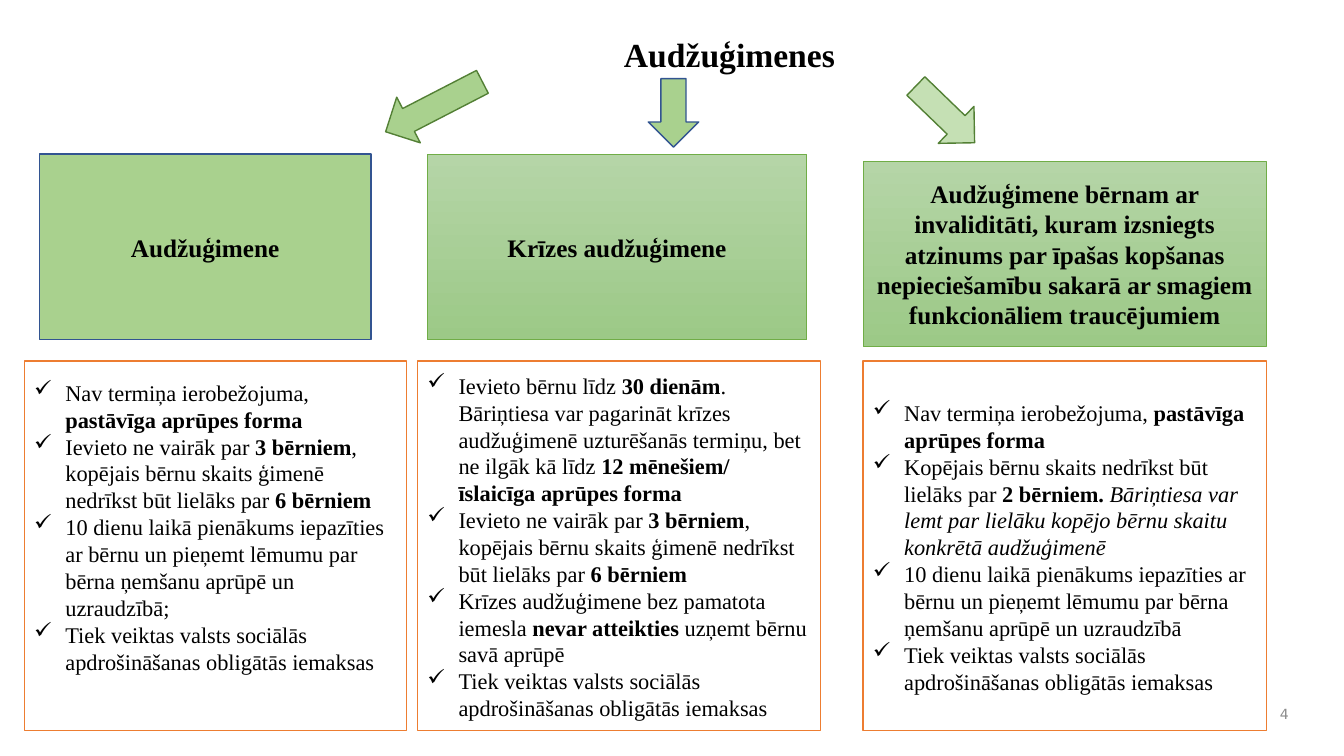
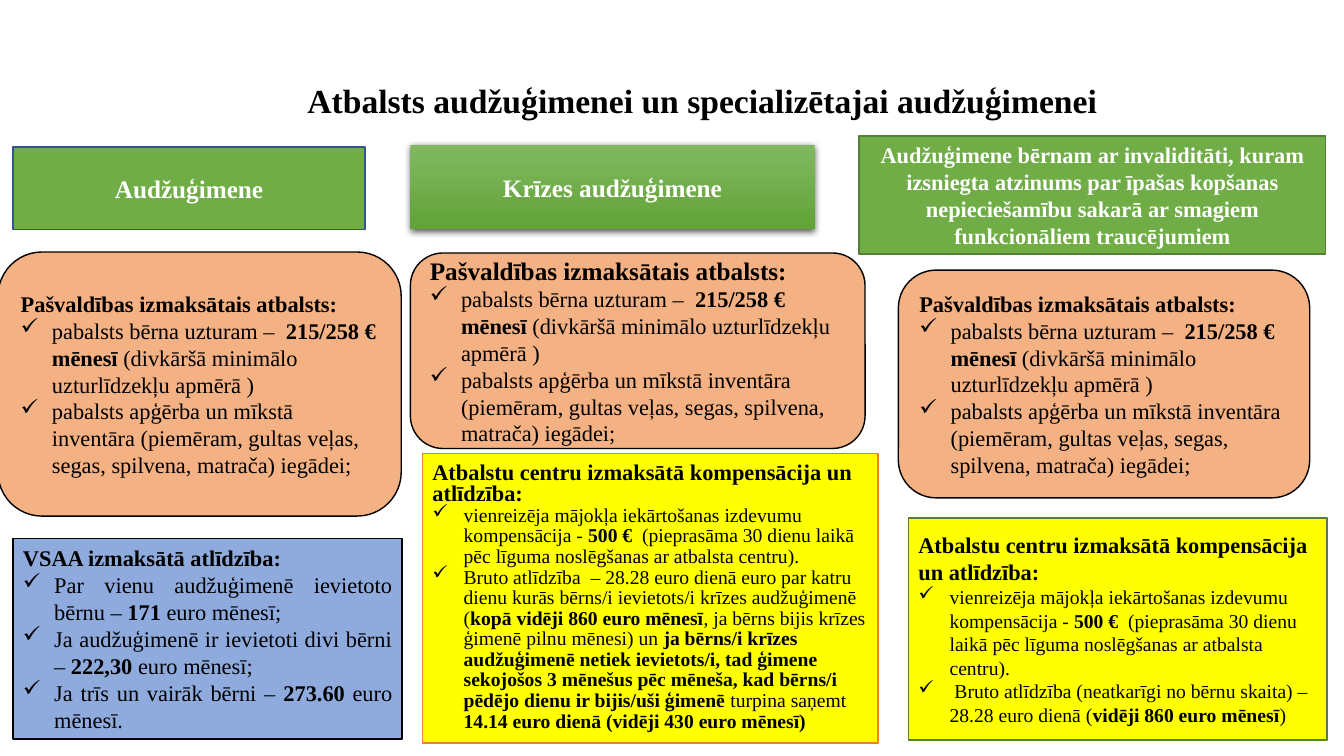
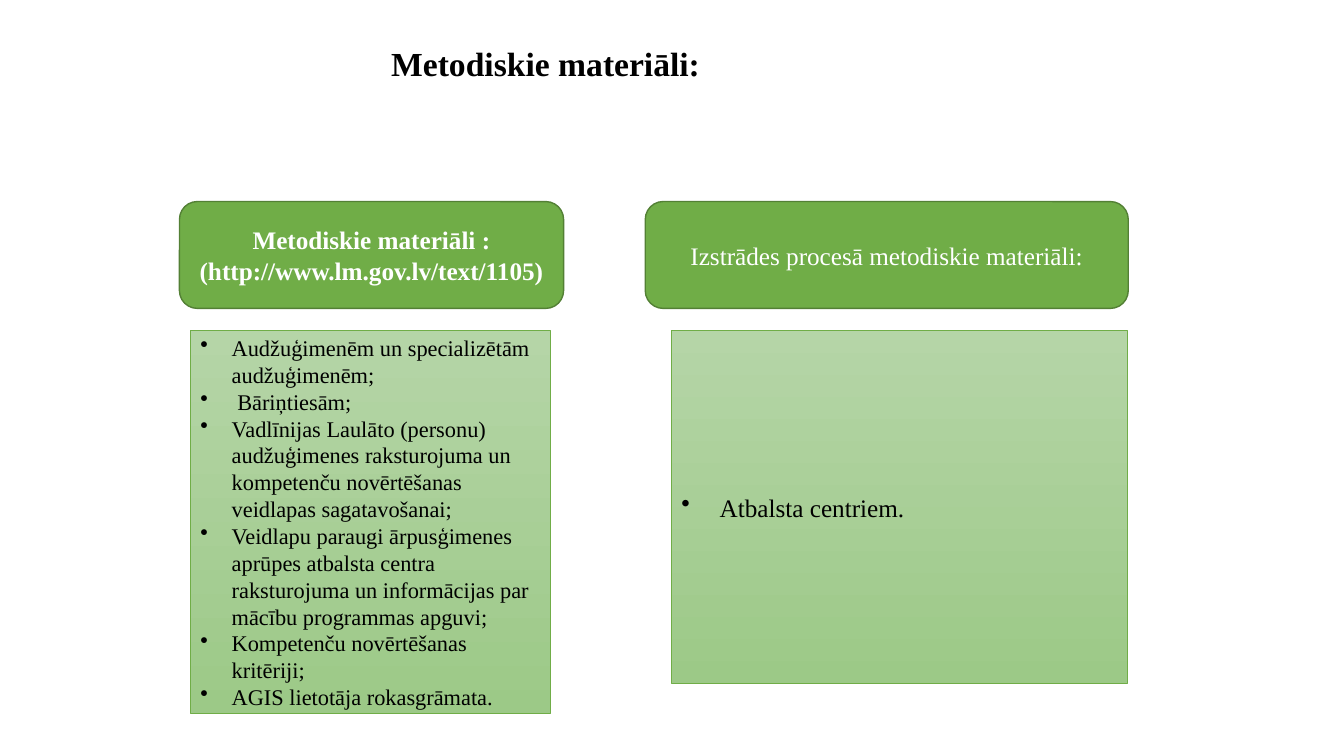
from lxml.etree import SubElement as Sub
from pptx import Presentation
from pptx.dml.color import RGBColor as Rgb
from pptx.enum.shapes import MSO_SHAPE as Form
from pptx.enum.text import MSO_ANCHOR as Anchor, PP_ALIGN as Align
from pptx.oxml.ns import qn
from pptx.util import Inches, Pt

FONT = "Times New Roman"
BLACK = Rgb(0x00, 0x00, 0x00)
WHITE = Rgb(0xFF, 0xFF, 0xFF)
GRAY = Rgb(0x8C, 0x8C, 0x8C)
GREEN = Rgb(0x70, 0xAD, 0x47)
DARK = Rgb(0x53, 0x80, 0x35)
LEAF = Rgb(0xA9, 0xD1, 0x8E)
PALE = Rgb(0xC5, 0xE0, 0xB4)
NAVY = Rgb(0x32, 0x54, 0x91)
BLUE = Rgb(0x8F, 0xAA, 0xDC)
ORANGE = Rgb(0xED, 0x7D, 0x31)
PEACH = Rgb(0xF4, 0xB1, 0x83)
YELLOW = Rgb(0xFF, 0xFF, 0x00)
SOFT = [Rgb(0xB5, 0xD5, 0xA7), Rgb(0x9C, 0xC9, 0x87)]
DEEP = [Rgb(0x81, 0xB8, 0x61), Rgb(0x62, 0xA3, 0x36)]

FAMILY = "Audžuģimene"
CRISIS = "Krīzes audžuģimene"
SPECIAL = ("Audžuģimene bērnam ar invaliditāti, kuram {} atzinums par īpašas kopšanas "
           "nepieciešamību sakarā ar smagiem funkcionāliem traucējumiem")
TERM = "Nav termiņa ierobežojuma, *pastāvīga aprūpes forma*"
LIMIT = ("Ievieto ne vairāk par *3 bērniem*, kopējais bērnu skaits ģimenē "
         "nedrīkst būt lielāks par *6 bērniem*")
MEET = ("10 dienu laikā pienākums iepazīties ar bērnu un pieņemt lēmumu "
        "par bērna ņemšanu aprūpē un uzraudzībā")
TAX = "Tiek veiktas valsts sociālās apdrošināšanas obligātās iemaksas"
TOWN = "Pašvaldības izmaksātais atbalsts:"
GRANTS = [
    "pabalsts bērna uzturam –  *215/258 € mēnesī* (divkāršā minimālo uzturlīdzekļu apmērā )",
    "pabalsts apģērba un mīkstā inventāra (piemēram, gultas veļas, segas, spilvena, "
    "matrača) iegādei;",
]
CENTER = "Atbalstu centru izmaksātā kompensācija un atlīdzība:"
HOME = ("vienreizēja mājokļa iekārtošanas izdevumu kompensācija - *500 €*  (pieprasāma "
        "30 dienu laikā pēc līguma noslēgšanas ar atbalsta centru).")


def put(frame, text, size=16, color=BLACK, bold=False, align=Align.LEFT,
        font=FONT, mark=None, dent=0.31, lead=None):
    """Add a paragraph in which *stars* mark bold and _bars_ mark italic."""
    para = frame.paragraphs[0]
    if para.runs:
        para = frame.add_paragraph()
    para.alignment = align
    if lead:
        para.line_spacing = lead
    if mark:
        props = para._p.get_or_add_pPr()
        props.set("marL", str(Inches(dent)))
        props.set("indent", str(-Inches(dent)))
        Sub(props, qn("a:buChar"), char=mark)
    for i, part in enumerate(text.split("*")):
        for j, piece in enumerate(part.split("_")):
            if piece:
                run = para.add_run()
                run.text = piece
                run.font.name = font
                run.font.size = Pt(size)
                run.font.color.rgb = color
                run.font.bold = bold or i % 2 == 1
                run.font.italic = j % 2 == 1


class Deck:
    """Hold the shared style and the current slide."""

    def __init__(self):
        """Open an empty wide deck."""
        self.show = Presentation()
        self.show.slide_width = Inches(13.33)
        self.show.slide_height = Inches(7.5)
        self.slide = None

    def page(self, text, left, top, align=Align.CENTER):
        """Start a slide with its title."""
        self.slide = self.show.slides.add_slide(self.show.slide_layouts[5])
        title = self.slide.shapes.title
        title.left, title.top = Inches(left), Inches(top)
        title.width, title.height = Inches(8.89), Inches(1.13)
        title.text_frame.vertical_anchor = Anchor.TOP
        title.text_frame.word_wrap = True
        put(title.text_frame, text, size=24, bold=True, align=align, lead=0.9)

    def shape(self, form, at, fill, line=None, width=1, turn=0):
        """Add a preset shape filled with a colour or a list of two."""
        item = self.slide.shapes.add_shape(form, *map(Inches, at))
        item.shadow.inherit = False
        item.rotation = turn
        if isinstance(fill, list):
            item.fill.gradient()
            item.fill.gradient_angle = 270
            for stop, color in zip(item.fill.gradient_stops, fill):
                stop.color.rgb = color
        else:
            item.fill.solid()
            item.fill.fore_color.rgb = fill
        if line is None:
            item.line.fill.background()
        else:
            item.line.color.rgb = line
            item.line.width = Pt(width)
        return item

    def arrow(self, at, fill, line=DARK, turn=0):
        """Add a block arrow."""
        self.shape(Form.DOWN_ARROW, at, fill, line, turn=turn)

    def head(self, at, text, fill=GREEN, line=DARK, width=1, form=Form.RECTANGLE,
             size=18, color=WHITE, bold=True):
        """Add a heading box with centred text."""
        item = self.shape(form, at, fill, line, width)
        item.text_frame.word_wrap = True
        for row in text.split("\n"):
            put(item.text_frame, row, size, color, bold, Align.CENTER)
        return item

    def body(self, at, rows, fill, line, width=1, form=Form.RECTANGLE, intro=None,
             big=16, pad=None, mark="✓", **style):
        """Add a box with a bold intro and a list."""
        frame = self.shape(form, at, fill, line, width).text_frame
        frame.word_wrap = True
        frame.vertical_anchor = Anchor.MIDDLE
        if pad is not None:
            frame.vertical_anchor = Anchor.TOP
            frame.margin_top = Inches(pad)
        if intro:
            put(frame, intro, **{**style, "size": big, "bold": True})
        for row in rows:
            put(frame, row, mark=mark, **style)

    def shade(self, item):
        """Give a shape a soft shadow below."""
        group = item._element.spPr.find(qn("a:effectLst"))
        cast = Sub(group, qn("a:outerShdw"), blurRad=str(Pt(4.5)), dist=str(Pt(1.5)),
                   dir="5400000", algn="ctr", rotWithShape="0")
        tone = Sub(cast, qn("a:srgbClr"), val=str(BLACK))
        Sub(tone, qn("a:alpha"), val="63000")

    def number(self, text):
        """Add the page number."""
        box = self.slide.shapes.add_textbox(*map(Inches, (12.44, 6.92, 0.44, 0.33)))
        box.text_frame.word_wrap = True
        box.text_frame.vertical_anchor = Anchor.MIDDLE
        put(box.text_frame, text, size=10, color=GRAY, align=Align.RIGHT, font="DejaVu Sans")


def kinds(deck):
    """Build the slide on kinds of foster family."""
    deck.page("Audžuģimenes", 2.79, 0.33)
    deck.number("4")
    lists = [
        (0.24, 3.79, 0.18, [TERM, LIMIT, MEET + ";", TAX]),
        (4.14, 4, 0.11, [
            "Ievieto bērnu līdz *30 dienām*. Bāriņtiesa var pagarināt krīzes audžuģimenē "
            "uzturēšanās termiņu, bet ne ilgāk kā līdz *12 mēnešiem/ īslaicīga aprūpes forma*",
            LIMIT,
            "Krīzes audžuģimene bez pamatota iemesla *nevar atteikties *uzņemt bērnu savā aprūpē",
            TAX]),
        (8.56, 4, 0.38, [
            TERM,
            "Kopējais bērnu skaits nedrīkst būt lielāks par *2 bērniem. *_Bāriņtiesa var lemt "
            "par lielāku kopējo bērnu skaitu konkrētā audžuģimenē_",
            MEET, TAX]),
    ]
    for left, width, pad, rows in lists:
        deck.body((left, 3.58, width, 3.67), rows, WHITE, ORANGE, pad=pad)
    deck.head((0.39, 1.53, 3.29, 1.84), FAMILY, LEAF, NAVY, color=BLACK)
    deck.head((4.24, 1.53, 3.76, 1.84), CRISIS, SOFT, GREEN, 0.5, color=BLACK)
    deck.head((8.56, 1.6, 4, 1.84), SPECIAL.format("izsniegts"), SOFT, GREEN, 0.5, color=BLACK)
    deck.arrow((4.05, 0.52, 0.51, 1.08), LEAF, turn=62.7)
    deck.arrow((9.12, 0.73, 0.51, 0.81), PALE, turn=314)
    deck.arrow((6.43, 0.78, 0.5, 0.68), LEAF, NAVY)


def support(deck):
    """Build the slide on support."""
    deck.page("Atbalsts audžuģimenei un specializētajai audžuģimenei", 2.52, 0.79)
    deck.body((4.19, 4.5, 4.52, 2.87), [
        HOME,
        "Bruto atlīdzība  – 28.28 euro dienā euro par katru dienu kurās bērns/i ievietots/i "
        "krīzes audžuģimenē (*kopā vidēji 860 euro mēnesī*, ja bērns bijis krīzes ģimenē pilnu "
        "mēnesi) un *ja bērns/i krīzes audžuģimenē netiek ievietots/i, tad ģimene sekojošos "
        "3 mēnešus pēc mēneša, kad bērns/i pēdējo dienu ir bijis/uši ģimenē *turpina saņemt"
        "* 14.14 euro dienā (vidēji 430 euro mēnesī)*",
    ], YELLOW, ORANGE, intro=CENTER, size=14, lead=Pt(14.7))
    deck.body((9.01, 5.14, 4.15, 2.2), [
        HOME,
        " Bruto atlīdzība (neatkarīgi no bērnu skaita) – 28.28 euro dienā "
        "(*vidēji 860 euro mēnesī*)",
    ], YELLOW, DARK, intro=CENTER, size=14)
    deck.body((0.13, 5.34, 3.86, 1.99), [
        "Par vienu audžuģimenē ievietoto bērnu – *171* euro mēnesī;",
        "Ja audžuģimenē ir ievietoti divi bērni – *222,30 *euro mēnesī;",
        "Ja trīs un vairāk bērni – *273.60* euro mēnesī.",
    ], BLUE, BLACK, intro="VSAA izmaksātā atlīdzība:", align=Align.JUSTIFY)
    for at, big in (((-0.02, 2.5, 4, 2.62), 16), ((4.07, 2.51, 4.51, 1.94), 18),
                    ((8.91, 2.68, 4.08, 2.26), 16)):
        deck.body(at, GRANTS, PEACH, BLACK, form=Form.ROUNDED_RECTANGLE,
                  intro=TOWN, big=big)
    deck.head((0.13, 1.46, 3.49, 0.82), FAMILY, line=NAVY)
    deck.shade(deck.head((4.07, 1.44, 4.01, 0.83), CRISIS, DEEP, None))
    deck.head((8.52, 1.35, 4.63, 1.17), SPECIAL.format("izsniegta"), size=16)


def guides(deck):
    """Build the slide on guidance."""
    deck.page("Metodiskie materiāli:", 3.78, 0.42, Align.LEFT)
    deck.head((1.78, 2, 3.81, 1.06),
              "Metodiskie materiāli :\n(http://www.lm.gov.lv/text/1105)",
              form=Form.ROUNDED_RECTANGLE)
    deck.head((6.4, 2, 4.79, 1.06), "Izstrādes procesā metodiskie materiāli:",
              form=Form.ROUNDED_RECTANGLE, bold=False)
    deck.body((1.89, 3.28, 3.57, 3.8), [
        "Audžuģimenēm un specializētām audžuģimenēm;",
        " Bāriņtiesām;",
        "Vadlīnijas Laulāto (personu) audžuģimenes raksturojuma un kompetenču novērtēšanas "
        "veidlapas sagatavošanai;",
        "Veidlapu paraugi ārpusģimenes aprūpes atbalsta centra raksturojuma un informācijas "
        "par mācību programmas apguvi;",
        "Kompetenču novērtēšanas kritēriji;",
        "AGIS lietotāja rokasgrāmata.",
    ], SOFT, GREEN, 0.5, mark="•")
    deck.body((6.66, 3.28, 4.52, 3.5), ["Atbalsta centriem."], SOFT, GREEN, 0.5,
              mark="•", size=18, dent=0.38)


def main():
    """Build and save the deck."""
    deck = Deck()
    for build in (kinds, support, guides):
        build(deck)
    deck.show.save("out.pptx")


if __name__ == "__main__":
    main()
